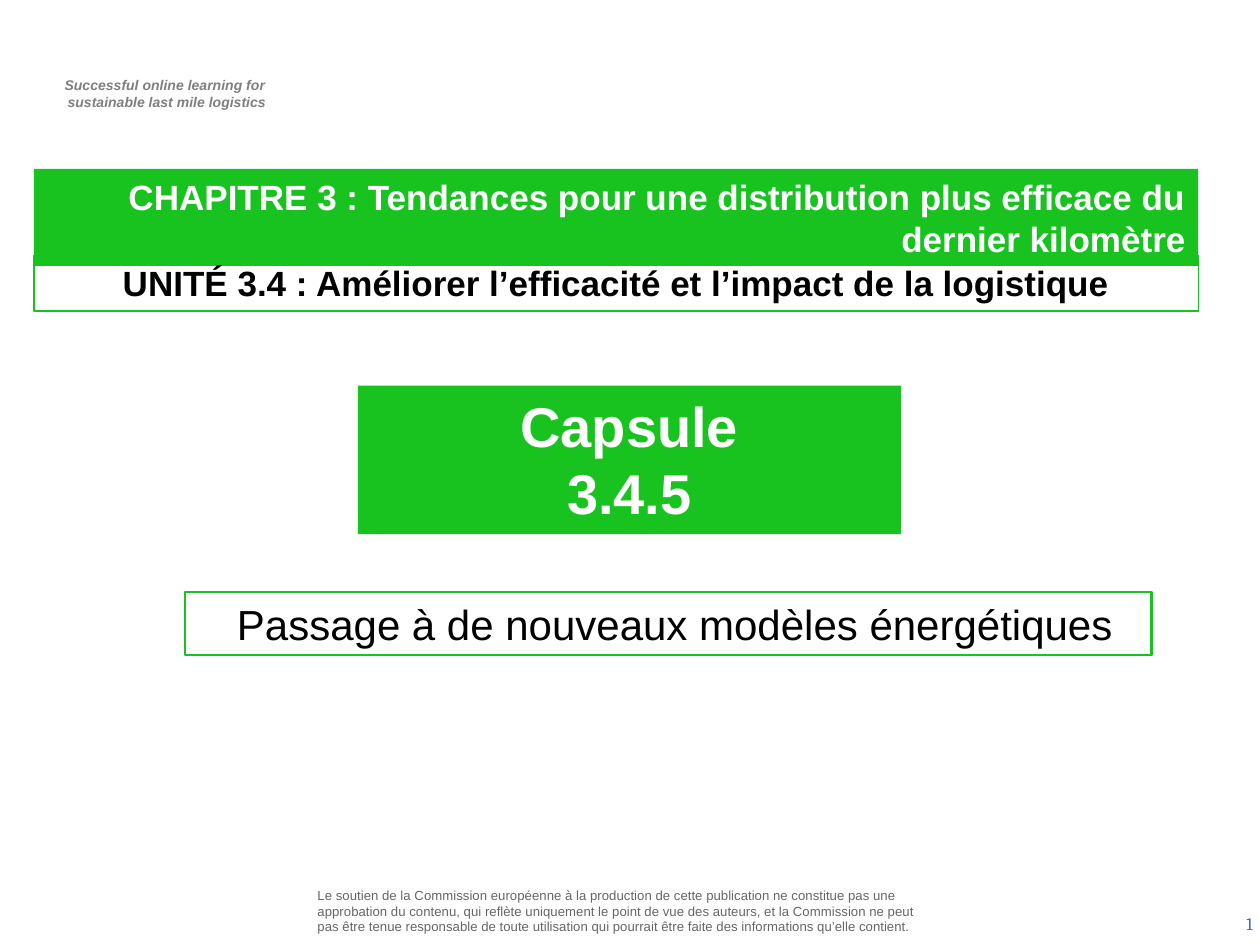
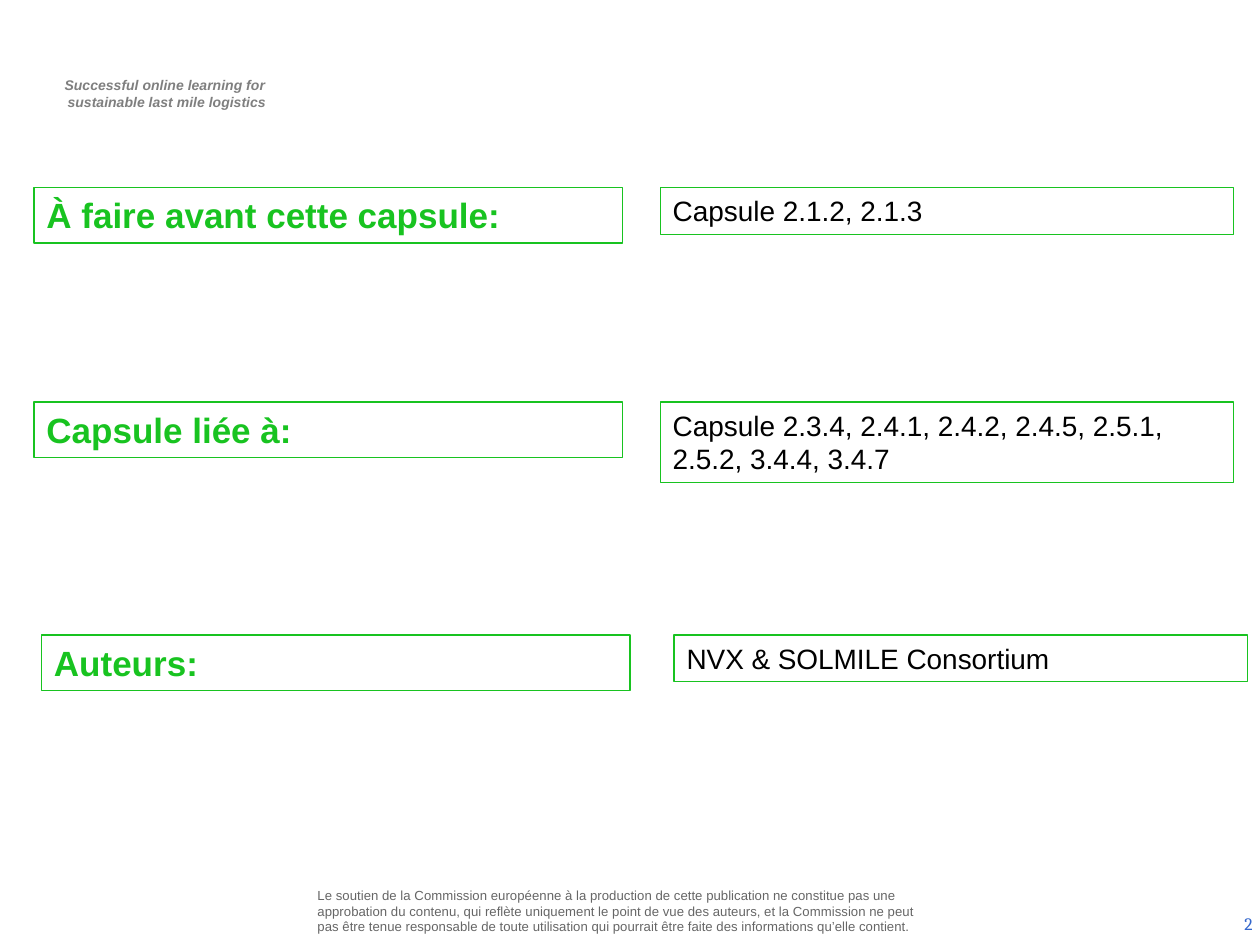
from dataclasses import dataclass

from pptx import Presentation
from pptx.dml.color import RGBColor
from pptx.enum.shapes import MSO_SHAPE
from pptx.enum.text import MSO_ANCHOR, MSO_AUTO_SIZE, PP_ALIGN
from pptx.presentation import Presentation as Deck
from pptx.slide import Slide
from pptx.util import Inches, Pt

RECTANGLE = MSO_SHAPE.RECTANGLE
TOP, MIDDLE = MSO_ANCHOR.TOP, MSO_ANCHOR.MIDDLE
LEFT, CENTER, RIGHT = PP_ALIGN.LEFT, PP_ALIGN.CENTER, PP_ALIGN.RIGHT
FIT_SHAPE, NO_FIT = MSO_AUTO_SIZE.SHAPE_TO_FIT_TEXT, MSO_AUTO_SIZE.NONE

COLORS = {
    "green": "18C320",
    "white": "FFFFFF",
    "black": "000000",
    "tagline": "7F7F7F",
    "notice": "666666",
    "number": "3366CC",
}

TAGLINE = ("Successful online learning for ", "sustainable last mile logistics")
NOTICE = (
    "Le soutien de la Commission européenne à la production de cette publication "
    "ne constitue pas une approbation du contenu, qui reflète uniquement le point "
    "de vue des auteurs, et la Commission ne peut pas être tenue responsable de "
    "toute utilisation qui pourrait être faite des informations qu’elle contient."
)


@dataclass(frozen=True)
class TextStyle:
    size: float
    color: str
    bold: bool = False
    italic: bool = False
    align: PP_ALIGN = LEFT
    font: str = "Arial"
    indent: float = 0


@dataclass(frozen=True)
class Panel:
    """A text block; with a fill or a line it is drawn as a rectangle."""

    left: float
    top: float
    width: float
    height: float
    lines: tuple[str, ...]
    style: TextStyle
    fill: str | None = None
    line_width: float = 0
    anchor: MSO_ANCHOR = TOP
    margins: tuple[float, float] = (0.1, 0.05)
    grows: bool = True


@dataclass(frozen=True)
class InfoRow:
    top: float
    label: str
    detail: str
    label_left: float = 0.27
    detail_left: float = 5.24
    detail_height: float = 0.37


TAGLINE_STYLE = TextStyle(8, "tagline", bold=True, italic=True, align=CENTER, indent=0.04)
NOTICE_STYLE = TextStyle(7.5, "notice")
NUMBER_STYLE = TextStyle(10, "number", align=RIGHT, font="Cambria")
CAPSULE_STYLE = TextStyle(32, "white", bold=True, align=CENTER)
TOPIC_STYLE = TextStyle(24, "black", align=CENTER, indent=0.1)
CHAPTER_STYLE = TextStyle(20, "white", bold=True, align=RIGHT)
UNIT_STYLE = TextStyle(20, "black", bold=True, align=CENTER)
LABEL_STYLE = TextStyle(20, "green", bold=True)
DETAIL_STYLE = TextStyle(16, "black")

COVER_PANELS = (
    Panel(2.84, 3.06, 4.31, 1.18, ("Capsule", "3.4.5"), CAPSULE_STYLE, fill="green"),
    Panel(1.47, 4.7, 7.67, 0.5, ("Passage à de nouveaux modèles énergétiques",),
          TOPIC_STYLE, line_width=1.5),
    Panel(0.27, 1.34, 9.24, 0.77,
          ("CHAPITRE 3 : Tendances pour une distribution plus efficace du dernier kilomètre",),
          CHAPTER_STYLE, fill="green"),
    Panel(0.27, 2.03, 9.24, 0.44,
          ("UNITÉ 3.4 : Améliorer l’efficacité et l’impact de la logistique",),
          UNIT_STYLE, line_width=0.75),
)

INFO_ROWS = (
    InfoRow(1.49, "À faire avant cette capsule:", "Capsule 2.1.2, 2.1.3"),
    InfoRow(3.19, "Capsule liée à:",
            "Capsule 2.3.4, 2.4.1, 2.4.2, 2.4.5, 2.5.1, 2.5.2, 3.4.4, 3.4.7",
            detail_height=0.64),
    InfoRow(5.04, "Auteurs:", "NVX & SOLMILE Consortium",
            label_left=0.33, detail_left=5.35),
)


def rgb(name: str) -> RGBColor:
    return RGBColor.from_string(COLORS[name])


def draw_panel(slide: Slide, panel: Panel) -> None:
    place = [Inches(n) for n in (panel.left, panel.top, panel.width, panel.height)]
    if panel.fill or panel.line_width:
        box = slide.shapes.add_shape(RECTANGLE, *place)
        box.shadow.inherit = False
    else:
        box = slide.shapes.add_textbox(*place)

    if panel.fill:
        box.fill.solid()
        box.fill.fore_color.rgb = rgb(panel.fill)
    else:
        box.fill.background()
    if panel.line_width:
        box.line.color.rgb = rgb("green")
        box.line.width = Pt(panel.line_width)
    else:
        box.line.fill.background()

    frame = box.text_frame
    frame.word_wrap = True
    frame.auto_size = FIT_SHAPE if panel.grows else NO_FIT
    frame.vertical_anchor = panel.anchor
    side, edge = panel.margins
    frame.margin_left = frame.margin_right = Inches(side)
    frame.margin_top = frame.margin_bottom = Inches(edge)
    frame.text = "\n".join(panel.lines)

    style = panel.style
    for para in frame.paragraphs:
        para.alignment = style.align
        if style.indent:
            para._p.get_or_add_pPr().set("marL", str(Inches(style.indent)))
        para.font.name = style.font
        para.font.size = Pt(style.size)
        para.font.bold = style.bold
        para.font.italic = style.italic
        para.font.color.rgb = rgb(style.color)


def add_page(deck: Deck) -> Slide:
    """Add a blank slide with the shared tagline, notice and page number."""
    page = deck.slides.add_slide(deck.slide_layouts[6])
    number = str(len(deck.slides))
    for panel in (
        Panel(0.29, 0.56, 2.03, 0.37, TAGLINE, TAGLINE_STYLE),
        Panel(2.48, 7.03, 4.93, 0.4, (NOTICE,), NOTICE_STYLE,
              anchor=MIDDLE, margins=(0.04, 0.04), grows=False),
        Panel(7.71, 7.13, 2.33, 0.4, (number,), NUMBER_STYLE,
              anchor=MIDDLE, grows=False),
    ):
        draw_panel(page, panel)
    return page


def draw_info_row(slide: Slide, row: InfoRow) -> None:
    draw_panel(slide, Panel(row.label_left, row.top, 4.67, 0.44, (row.label,),
                            LABEL_STYLE, fill="white", line_width=0.75))
    draw_panel(slide, Panel(row.detail_left, row.top, 4.55, row.detail_height,
                            (row.detail,), DETAIL_STYLE, fill="white", line_width=0.75))


def main() -> None:
    deck = Presentation()
    deck.slide_width, deck.slide_height = Inches(10), Inches(7.5)

    cover = add_page(deck)
    for panel in COVER_PANELS:
        draw_panel(cover, panel)

    overview = add_page(deck)
    for row in INFO_ROWS:
        draw_info_row(overview, row)

    deck.save("out.pptx")


if __name__ == "__main__":
    main()
